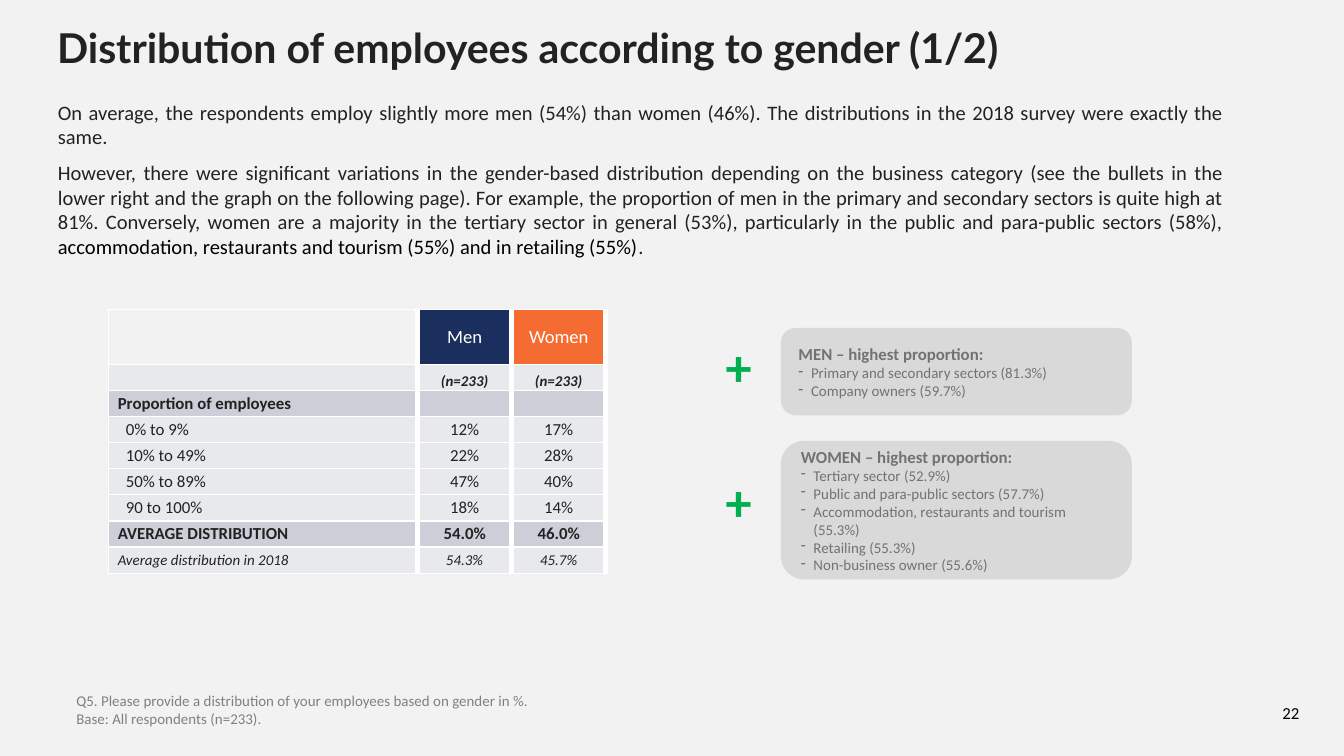
"""Build a slide on how staff are split by gender."""
from dataclasses import dataclass

from lxml import etree
from pptx import Presentation
from pptx.dml.color import RGBColor
from pptx.enum.shapes import MSO_SHAPE
from pptx.enum.text import MSO_ANCHOR, MSO_AUTO_SIZE, PP_ALIGN
from pptx.oxml.ns import qn
from pptx.util import Pt

LEFT, MID, FULL = PP_ALIGN.LEFT, PP_ALIGN.CENTER, PP_ALIGN.JUSTIFY
TOP, CENTRE, BOTTOM = MSO_ANCHOR.TOP, MSO_ANCHOR.MIDDLE, MSO_ANCHOR.BOTTOM
ROUND = MSO_SHAPE.ROUNDED_RECTANGLE
FIXED = MSO_AUTO_SIZE.NONE
COLORS = {
    "back": "F2F2F2", "ink": "222223", "black": "000000", "white": "FFFFFF",
    "navy": "1B2F5F", "orange": "F46C31", "pale": "E7E9EC", "band": "CCCFD7",
    "card": "D9D9D9", "text": "767171", "plus": "00B050", "note": "808080",
}


@dataclass
class Row:
    """One line of the table and its style."""
    cells: tuple[str, str, str]
    fills: tuple[str, str, str] = ("pale",) * 3
    size: float = 9
    bold: bool = False
    slant: bool = False
    color: str = "ink"
    pad: float = 9.36


@dataclass
class Card:
    """A grey box with a heading and bullets."""
    top: float
    height: float
    head: str
    items: tuple[str, ...]
    plus: float


BAND = ("band",) * 3
ROWS = [
    Row(("", "Men", "Women"), ("", "navy", "orange"), 10, color="white"),
    Row(("", "(n=233)", "(n=233)"), size=8, bold=True, slant=True),
    Row(("Proportion of employees", "", ""), BAND, bold=True, pad=5.04),
    Row(("0% to 9%", "12%", "17%")),
    Row(("10% to 49%", "22%", "28%")),
    Row(("50% to 89%", "47%", "40%")),
    Row(("90 to 100%", "18%", "14%")),
    Row(("AVERAGE DISTRIBUTION", "54.0%", "46.0%"), BAND, bold=True, pad=5.04),
    Row(("Average distribution in 2018", "54.3%", "45.7%"), size=8, slant=True, pad=5.04),
]
CARDS = [
    Card(175.7, 46.8, "MEN – highest proportion:",
         ("Primary and secondary sectors (81.3%)", "Company owners (59.7%)"), 175.7),
    Card(236.2, 74.2, "WOMEN – highest proportion:",
         ("Tertiary sector (52.9%)", "Public and para-public sectors (57.7%)",
          "Accommodation, restaurants and tourism (55.3%)",
          "Retailing (55.3%)", "Non-business owner (55.6%)"), 247.7),
]
BODY = [
    [("On average, the respondents employ slightly more men (54%) than women (46%). "
      "The distributions in the 2018 survey were exactly the same.", "ink")],
    [("However, there were significant variations in the gender-based distribution "
      "depending on the business category (see the bullets in the lower right and the "
      "graph on the following page). For example, the proportion of men in the primary "
      "and secondary sectors is quite high at 81%. Conversely, women are a majority in "
      "the tertiary sector in general (53%), particularly in the public and para-public "
      "sectors (58%), ", "ink"),
     ("accommodation, restaurants and tourism (55%) and in retailing (55%)", "black"),
     (".", "ink")],
]
NOTES = ("Q5. Please provide a distribution of your employees based on gender in %.",
         "Base: All respondents (n=233).")


def tint(name: str) -> RGBColor:
    """Look up a colour by name."""
    return RGBColor.from_string(COLORS[name])


def style(para, size: float, color: str, bold=False, slant=False,
          align=LEFT, face="Calibri") -> None:
    """Set the font and alignment of a paragraph."""
    para.alignment = align
    font = para.font
    font.name, font.size, font.bold, font.italic = face, Pt(size), bold, slant
    font.color.rgb = tint(color)


def bullet(para, char: str = "", indent: float = 0) -> None:
    """Give a paragraph a bullet, or none."""
    props = para._p.get_or_add_pPr()
    props.set("marL", str(Pt(indent)))
    props.set("indent", str(-Pt(indent)))
    if char:
        etree.SubElement(props, qn("a:buChar")).set("char", char)
    else:
        etree.SubElement(props, qn("a:buNone"))


def place(shape, left: float, top: float, width: float, height: float) -> None:
    """Move and size a shape."""
    shape.left, shape.top = Pt(left), Pt(top)
    shape.width, shape.height = Pt(width), Pt(height)


def inset(frame, side: float, edge: float) -> None:
    """Set the margins of a text frame."""
    frame.margin_left = frame.margin_right = Pt(side)
    frame.margin_top = frame.margin_bottom = Pt(edge)


def add_text(slide, spot: tuple, lines: tuple, size: float, color: str,
             bold=False, align=LEFT, anchor=TOP) -> None:
    """Add a text box of like lines."""
    frame = slide.shapes.add_textbox(*map(Pt, spot)).text_frame
    frame.word_wrap, frame.vertical_anchor = True, anchor
    frame.text = "\n".join(lines)
    for para in frame.paragraphs:
        style(para, size, color, bold, align=align)


def add_title(slide) -> None:
    """Fill the title."""
    title = slide.shapes.title
    place(title, 25.5, 13.7, 675.4, 25.9)
    frame = title.text_frame
    frame.text = "Distribution of employees according to gender (1/2)"
    frame.auto_size, frame.vertical_anchor = FIXED, CENTRE
    inset(frame, 5.04, 2.88)
    para = frame.paragraphs[0]
    para.line_spacing = 0.9
    style(para, 22, "ink", True, face="Lato")


def add_body(slide) -> None:
    """Fill the body with its two paragraphs."""
    body = slide.placeholders[1]
    place(body, 23.8, 53.3, 639.4, 85.7)
    frame = body.text_frame
    frame.auto_size, frame.vertical_anchor = FIXED, TOP
    inset(frame, 7.2, 0)
    for i, parts in enumerate(BODY):
        para = frame.add_paragraph() if i else frame.paragraphs[0]
        bullet(para)
        para.space_before = Pt(6 if i else 0)
        style(para, 11, "ink", align=FULL)
        for text, color in parts:
            run = para.add_run()
            run.text = text
            run.font.color.rgb = tint(color)


def edge(cell, side: str, width: float) -> None:
    """Draw one white border of a cell."""
    line = etree.SubElement(cell._tc.get_or_add_tcPr(), qn(f"a:ln{side}"), w=str(Pt(width)))
    fill = etree.SubElement(line, qn("a:solidFill"))
    etree.SubElement(fill, qn("a:srgbClr"), val=COLORS["white"])


def add_table(slide) -> None:
    """Add the table of shares."""
    table = slide.shapes.add_table(len(ROWS), 3, Pt(58.1), Pt(165.7),
                                   Pt(266.4), Pt(141.5)).table
    table.first_row = table.horz_banding = False
    for col, width in zip(table.columns, (165.6, 50.4, 50.4)):
        col.width = Pt(width)
    for r, row in enumerate(ROWS):
        table.rows[r].height = Pt(14 if r else 29.5)
        for c, (text, fill) in enumerate(zip(row.cells, row.fills)):
            cell = table.cell(r, c)
            inset(cell, 0.72 if c else row.pad, 0)
            cell.vertical_anchor = TOP if r == 1 else CENTRE
            for side, width in zip("LRTB", (3 if c else 0.75, 3, 0.75, 0.75)):
                edge(cell, side, width)
            if fill:
                cell.fill.solid()
                cell.fill.fore_color.rgb = tint(fill)
            else:
                cell.fill.background()
            cell.text = text
            para = cell.text_frame.paragraphs[0]
            if r == 1:
                para.line_spacing = Pt(14)
            style(para, row.size, row.color, row.bold, row.slant, MID if c else LEFT)


def add_card(slide, card: Card) -> None:
    """Add a card and its plus sign."""
    box = slide.shapes.add_shape(ROUND, Pt(418.4), Pt(card.top), Pt(188), Pt(card.height))
    box.shadow.inherit = False
    box.fill.solid()
    box.fill.fore_color.rgb = tint("card")
    box.line.fill.background()
    frame = box.text_frame
    frame.word_wrap, frame.vertical_anchor = True, CENTRE
    frame.text = "\n".join((card.head, *card.items))
    head, *items = frame.paragraphs
    style(head, 9, "text", True)
    for para in items:
        bullet(para, "-", 6.75)
        style(para, 8, "text")
    add_text(slide, (360, card.plus, 71.3, 41), ("+",), 28, "plus", True, MID)


def main() -> None:
    """Build and save the deck."""
    deck = Presentation()
    deck.slide_width, deck.slide_height = Pt(720), Pt(405)
    slide = deck.slides.add_slide(deck.slide_layouts[1])
    slide.background.fill.solid()
    slide.background.fill.fore_color.rgb = tint("back")
    add_text(slide, (673.2, 369.4, 36.7, 21.6), ("22",), 9, "black", align=MID, anchor=BOTTOM)
    add_title(slide)
    add_body(slide)
    add_table(slide)
    for card in CARDS:
        add_card(slide, card)
    add_text(slide, (33.8, 367.2, 581.8, 26.6), NOTES, 8, "note")
    deck.save("out.pptx")


if __name__ == "__main__":
    main()
